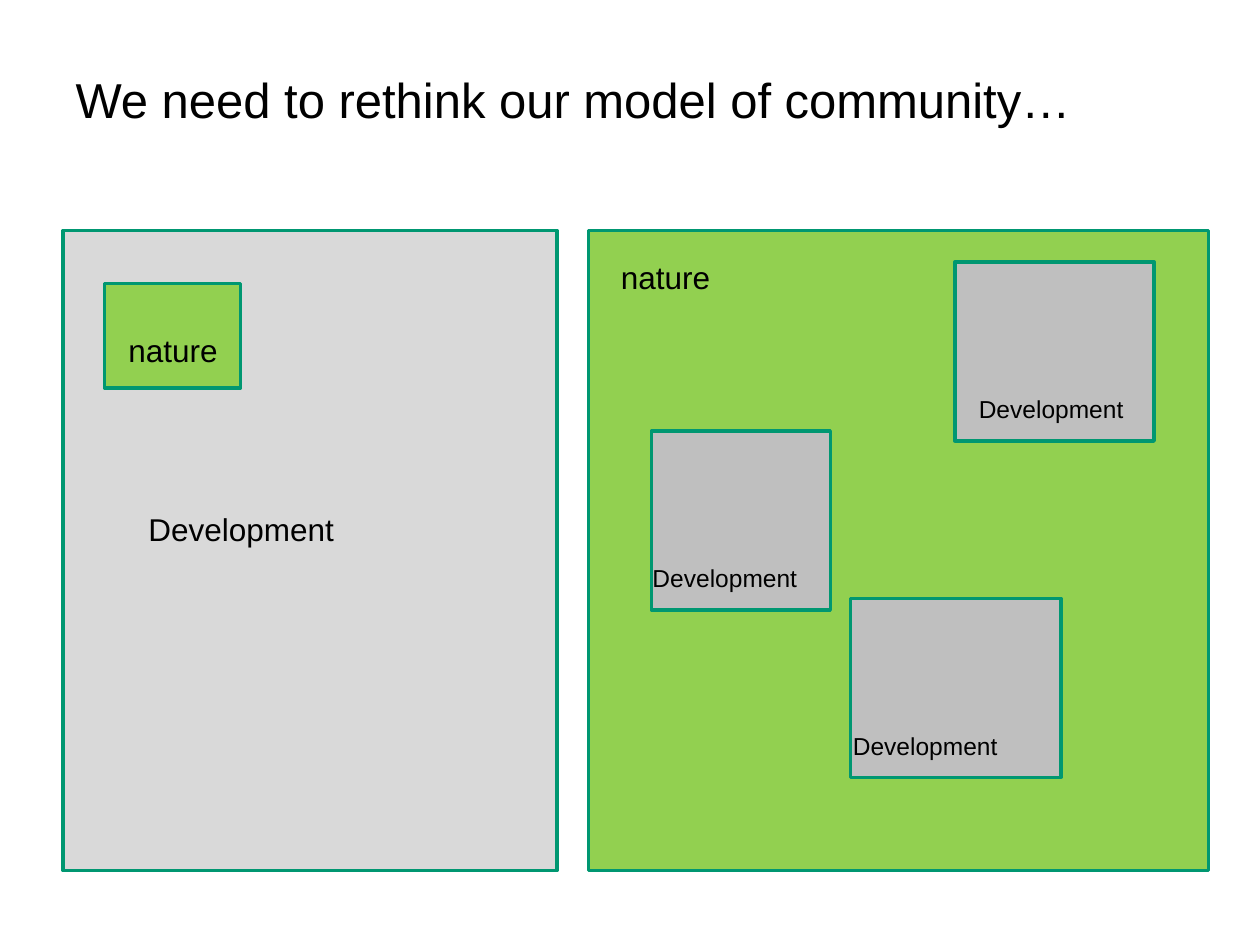
from pptx import Presentation
from pptx.dml.color import RGBColor
from pptx.enum.shapes import MSO_SHAPE
from pptx.enum.text import MSO_ANCHOR, MSO_AUTO_SIZE, PP_ALIGN
from pptx.util import Inches, Pt

COLORS = {
    "text": "000000",
    "edge": "009771",
    "nature": "92D050",
    "town": "D9D9D9",
    "block": "BFBFBF",
}
FRAME = {
    "word_wrap": True,
    "auto_size": MSO_AUTO_SIZE.NONE,
    "vertical_anchor": MSO_ANCHOR.TOP,
}


def color(name):
    return RGBColor.from_string(COLORS[name])


def apply(target, values):
    for name, value in values.items():
        setattr(target, name, value)


def write(shape, text, size):
    frame = shape.text_frame
    frame.text = text
    apply(frame, FRAME)
    para = frame.paragraphs[0]
    para.alignment = PP_ALIGN.LEFT
    apply(para.font, {"name": "Arial", "size": Pt(size)})
    para.font.color.rgb = color("text")


def add_title(slide, text, box):
    title = slide.shapes.title
    places = map(Inches, box)
    apply(title, dict(zip(("left", "top", "width", "height"), places)))
    write(title, text, 28)


def add_area(slide, fill, box):
    area = slide.shapes.add_shape(MSO_SHAPE.RECTANGLE, *map(Inches, box))
    area.shadow.inherit = False
    area.fill.solid()
    area.fill.fore_color.rgb = color(fill)
    area.line.color.rgb = color("edge")
    area.line.width = Pt(2)


def add_label(slide, text, size, box):
    write(slide.shapes.add_textbox(*map(Inches, box)), text, size)


def add_old(slide):
    """Development with a small patch of nature inside."""
    add_area(slide, "town", (0.5, 1.83, 3.92, 5.08))
    add_area(slide, "nature", (0.83, 2.25, 1.08, 0.83))
    add_label(slide, "Development", 18, (1.08, 4, 2.83, 0.57))
    add_label(slide, "nature", 18, (0.92, 2.58, 1.08, 0.4))


def add_new(slide):
    """Nature with blocks of development inside."""
    add_area(slide, "nature", (4.67, 1.83, 4.92, 5.08))
    add_label(slide, "nature", 18, (4.83, 2, 1.33, 0.4))
    # left, top and width of each block, then left and width of its label
    blocks = [
        (7.58, 2.08, 1.58, 7.67, 1.67),
        (6.75, 4.75, 1.67, 6.67, 1.75),
        (5.17, 3.42, 1.42, 5.08, 1.92),
    ]
    for left, top, width, start, span in blocks:
        add_area(slide, "block", (left, top, width, 1.42))
        add_label(slide, "Development", 14, (start, top + 1, span, 0.34))


def main():
    deck = Presentation()
    apply(deck, {"slide_width": Inches(10), "slide_height": Inches(7.5)})
    slide = deck.slides.add_slide(deck.slide_layouts[5])
    add_title(slide, "We need to rethink our model of community…",
              (0.5, 0.5, 9.17, 0.57))
    add_old(slide)
    add_new(slide)
    deck.save("out.pptx")


if __name__ == "__main__":
    main()
